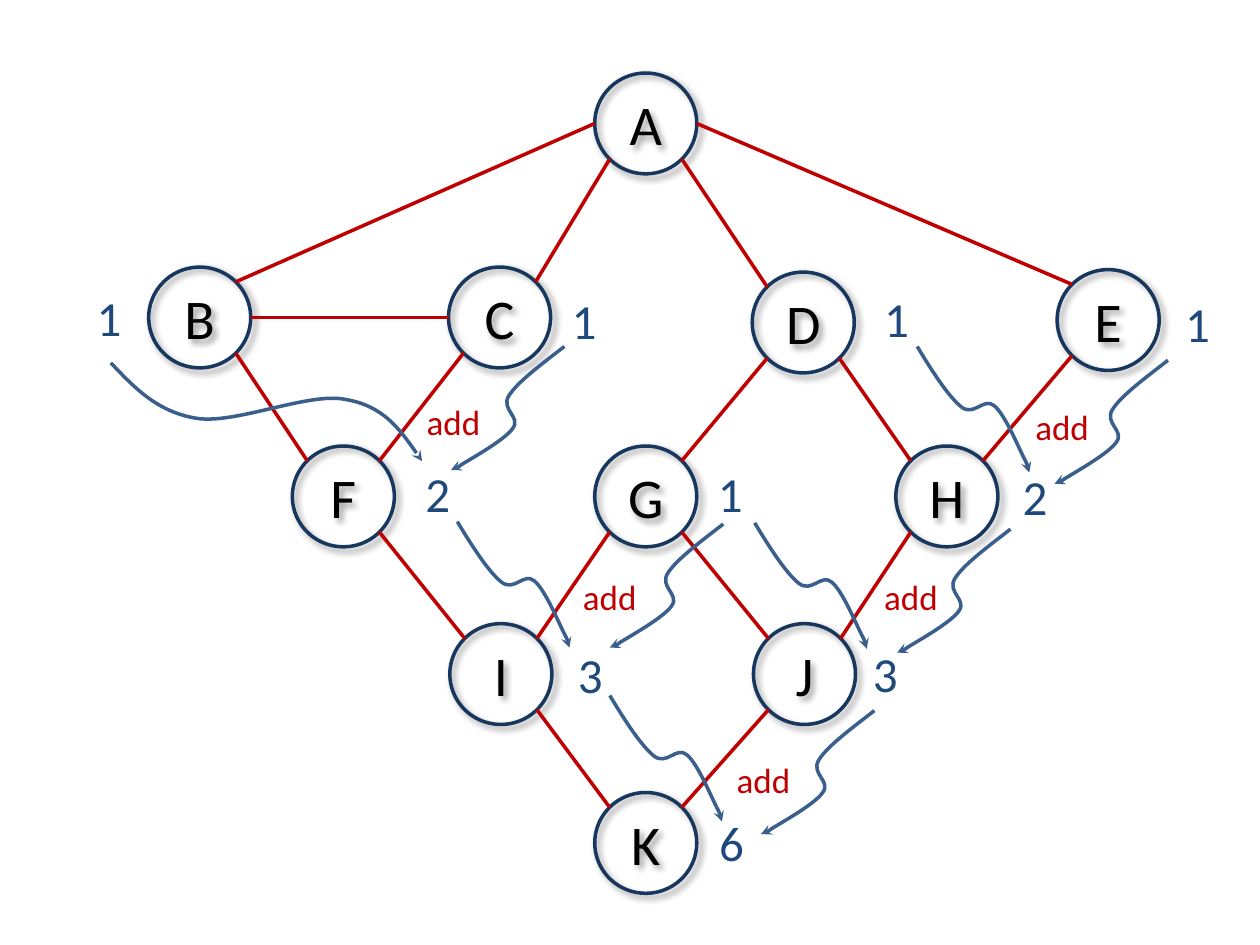
"""Build a slide that counts shortest paths through a layered graph."""
import math

import lxml.etree
import pptx
import pptx.dml.color
import pptx.enum.shapes
import pptx.enum.text
import pptx.oxml
import pptx.oxml.ns
import pptx.util

Inches = pptx.util.Inches
qn = pptx.oxml.ns.qn

COLORS = {"outline": "17375E", "edge": "C00000", "count": "1F497D", "arrow": "3A5F8C", "letter": "000000"}
FONT = "Calibri"
NODE_SIZE = (0.81, 0.8)
COUNT_SIZE = (0.61, 0.57)
ADD_SIZE = (0.86, 0.44)

NODES = {
    "A": (4.72, 0.58), "B": (1.18, 2.12), "C": (3.56, 2.12), "D": (5.97, 2.16),
    "E": (8.39, 2.14), "F": (2.32, 3.54), "G": (4.72, 3.54), "H": (7.11, 3.54),
    "I": (3.57, 4.95), "J": (5.98, 4.95), "K": (4.72, 6.29),
}
SITES = ["top", "top left", "left", "bottom left", "bottom", "bottom right", "right", "top right"]
EDGES = [
    ("A", "left", "B", "top right"), ("A", "bottom left", "C", "top right"),
    ("A", "bottom right", "D", "top left"), ("A", "right", "E", "top left"),
    ("B", "right", "C", "left"),
    ("B", "bottom right", "F", "top left"), ("C", "bottom left", "F", "top right"),
    ("D", "bottom left", "G", "top right"), ("D", "bottom right", "H", "top left"),
    ("E", "bottom left", "H", "top right"),
    ("F", "bottom right", "I", "top left"), ("G", "bottom left", "I", "top right"),
    ("G", "bottom right", "J", "top left"), ("H", "bottom left", "J", "top right"),
    ("I", "bottom right", "K", "top left"), ("J", "bottom left", "K", "top right"),
]
SINGLE_COUNTS = [(0.56, 2.23), (4.33, 2.26), (6.81, 2.24), (9.2, 2.28), (5.49, 3.63)]

CURVES = {
    "long": [(-0.15, -0.22), (-0.31, -0.44), (-0.61, -0.49), (-0.9, -0.55), (-1.48, -0.29),
             (-1.79, -0.34), (-2.1, -0.39), (-2.28, -0.58), (-2.47, -0.78)],
    "from left": [(0, 0), (0.01, 0), (-0.03, -0.09), (-0.08, -0.18), (-0.19, -0.46), (-0.28, -0.53),
                  (-0.36, -0.6), (-0.44, -0.44), (-0.54, -0.52), (-0.64, -0.6), (-0.77, -0.8), (-0.89, -1)],
    "from right": [(0, 0.01), (0, 0.02), (0.08, -0.04), (0.16, -0.09), (0.43, -0.24), (0.49, -0.33),
                   (0.56, -0.42), (0.39, -0.48), (0.46, -0.59), (0.53, -0.7), (0.72, -0.84), (0.9, -0.98)],
}
ADDITIONS = [
    {"sum": "2", "sum_at": (3.17, 3.63), "add_at": (3.17, 3.13),
     "tips": {"long": (3.35, 3.66), "from right": (3.58, 3.73)}},
    {"sum": "2", "sum_at": (7.91, 3.65), "add_at": (8, 3.17),
     "tips": {"from left": (8.17, 3.75), "from right": (8.37, 3.84)}},
    {"sum": "3", "sum_at": (4.38, 5.07), "add_at": (4.41, 4.52),
     "tips": {"from left": (4.52, 5.14), "from right": (4.84, 5.14)}},
    {"sum": "3", "sum_at": (6.72, 5.06), "add_at": (6.8, 4.52),
     "tips": {"from left": (6.88, 5.15), "from right": (7.12, 5.18)}},
    {"sum": "6", "sum_at": (5.5, 6.4), "add_at": (5.63, 5.97),
     "tips": {"from left": (5.73, 6.52), "from right": (6.04, 6.62)}},
]


def rgb(name):
    return pptx.dml.color.RGBColor.from_string(COLORS[name])


def style_line(shape, color):
    shape.line.color.rgb = rgb(color)
    shape.line.width = pptx.util.Pt(2)


def write(shape, text, size, color):
    paragraph = shape.text_frame.paragraphs[0]
    paragraph.alignment = pptx.enum.text.PP_ALIGN.CENTER
    run = paragraph.add_run()
    run.text = text
    run.font.name = FONT
    run.font.size = pptx.util.Pt(size)
    run.font.color.rgb = rgb(color)


def add_label(shapes, text, position, box, size, color):
    label = shapes.add_textbox(*map(Inches, position + box))
    label.text_frame.word_wrap = True
    label.text_frame.auto_size = pptx.enum.text.MSO_AUTO_SIZE.SHAPE_TO_FIT_TEXT
    write(label, text, size, color)


def add_node(shapes, letter, position):
    node = shapes.add_shape(pptx.enum.shapes.MSO_SHAPE.OVAL, *map(Inches, position + NODE_SIZE))
    node.fill.background()
    style_line(node, "outline")
    node.shadow.inherit = False
    effects = node.element.spPr.find(qn("a:effectLst"))
    shadow = lxml.etree.SubElement(effects, qn("a:outerShdw"), blurRad=str(pptx.util.Pt(4)),
                                   dist=str(pptx.util.Pt(3)), dir="2700000", algn="tl", rotWithShape="0")
    black = lxml.etree.SubElement(shadow, qn("a:srgbClr"), val=COLORS["letter"])
    lxml.etree.SubElement(black, qn("a:alpha"), val="40000")
    frame = node.text_frame
    frame.margin_left = frame.margin_right = 0
    frame.vertical_anchor = pptx.enum.text.MSO_ANCHOR.MIDDLE
    write(node, letter, 32, "letter")
    return node


def site_point(node, site):
    angle = math.radians(45 * SITES.index(site))
    x = node.left + node.width / 2 * (1 - math.sin(angle))
    y = node.top + node.height / 2 * (1 - math.cos(angle))
    return round(x), round(y)


def add_edge(shapes, start, start_site, end, end_site):
    edge = shapes.add_connector(pptx.enum.shapes.MSO_CONNECTOR.STRAIGHT,
                                *site_point(start, start_site), *site_point(end, end_site))
    style_line(edge, "edge")
    lxml.etree.SubElement(edge.element.spPr, qn("a:effectLst"))
    joints = edge.element.nvCxnSpPr.cNvCxnSpPr
    for tag, node, site in (("a:stCxn", start, start_site), ("a:endCxn", end, end_site)):
        lxml.etree.SubElement(joints, qn(tag), id=str(node.shape_id), idx=str(SITES.index(site)))


def add_curve(shapes, tip, offsets):
    points = [(Inches(tip[0] + x), Inches(tip[1] + y)) for x, y in offsets]
    builder = shapes.build_freeform(*map(Inches, tip))
    builder.add_line_segments(points, close=False)
    curve = builder.convert_to_shape()
    segments = list(curve.element.iter(qn("a:lnTo")))
    outline = segments[0].getparent()
    for first in range(0, len(segments), 3):
        bezier = lxml.etree.SubElement(outline, qn("a:cubicBezTo"))
        for segment in segments[first:first + 3]:
            bezier.append(segment[0])
            outline.remove(segment)
    curve.fill.background()
    curve.shadow.inherit = False
    style_line(curve, "arrow")
    lxml.etree.SubElement(curve.element.spPr.find(qn("a:ln")), qn("a:headEnd"), type="stealth")


def main():
    presentation = pptx.Presentation()
    presentation.slide_width = Inches(10)
    presentation.slide_height = Inches(7.5)
    shapes = presentation.slides.add_slide(presentation.slide_layouts[6]).shapes
    nodes = {letter: add_node(shapes, letter, position) for letter, position in NODES.items()}
    for start, start_site, end, end_site in EDGES:
        add_edge(shapes, nodes[start], start_site, nodes[end], end_site)
    for position in SINGLE_COUNTS:
        add_label(shapes, "1", position, COUNT_SIZE, 28, "count")
    for addition in ADDITIONS:
        members = shapes.add_group_shape().shapes
        add_label(members, addition["sum"], addition["sum_at"], COUNT_SIZE, 28, "count")
        for kind, tip in addition["tips"].items():
            add_curve(members, tip, CURVES[kind])
        add_label(members, "add", addition["add_at"], ADD_SIZE, 20, "edge")
    presentation.save("out.pptx")


if __name__ == "__main__":
    main()
